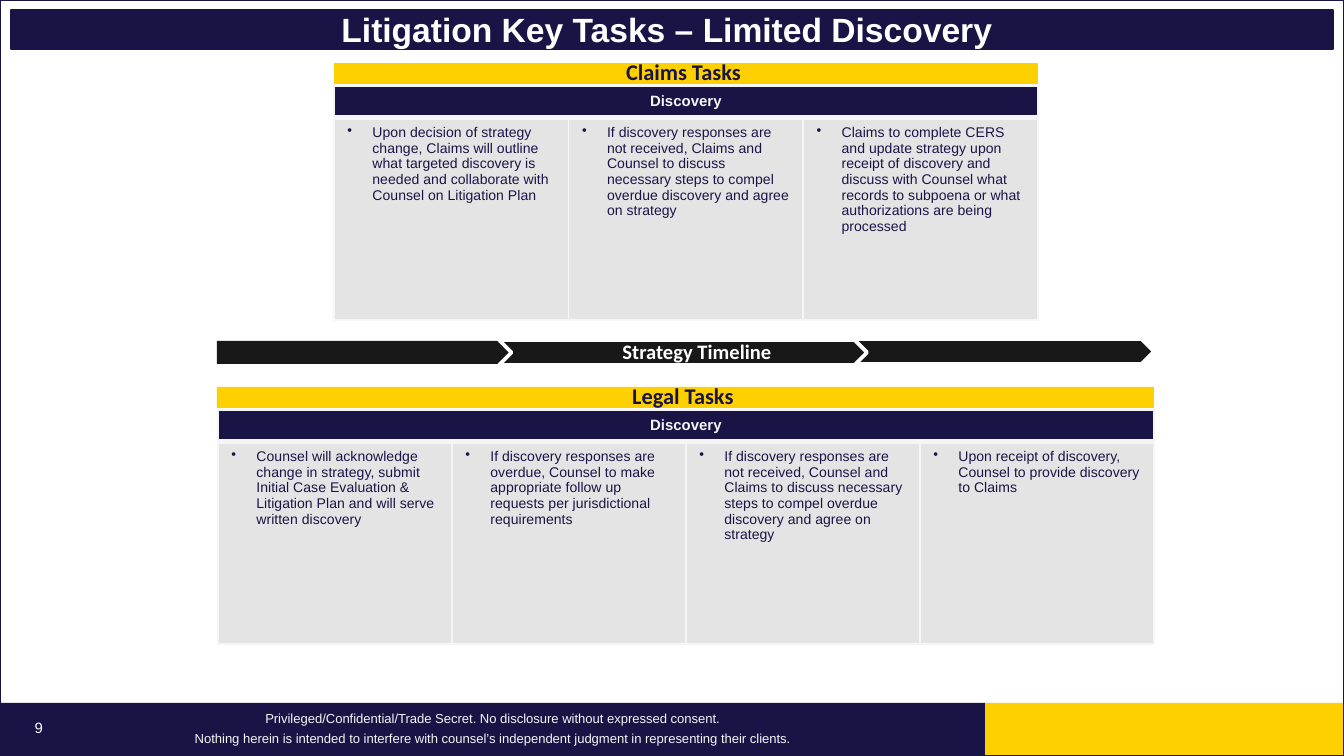
import pptx
import pptx.util
import pptx.dml.color
import pptx.enum.shapes
import pptx.enum.text
import pptx.oxml
import pptx.oxml.ns

SCALE = 9144000 / 1344  # EMU in one px
SHAPE = pptx.enum.shapes.MSO_SHAPE
ALIGN = pptx.enum.text.PP_ALIGN
MIDDLE = pptx.enum.text.MSO_ANCHOR.MIDDLE

THEME = {
    "navy": "1A1446", "yellow": "FFD000", "grey": "E4E4E4",
    "black": "181818", "white": "FFFFFF", "pale": "F5F5F5",
    "title": {"name": "Arial", "size": pptx.util.Pt(18), "bold": True},
    "section": {"name": "Calibri", "size": pptx.util.Pt(12), "bold": True},
    "timeline": {"name": "Calibri", "size": pptx.util.Pt(11), "bold": True},
    "header": {"name": "Arial", "size": pptx.util.Pt(8), "bold": True},
    "task": {"name": "Arial", "size": pptx.util.Pt(7.5), "bold": False},
    "footer": {"name": "Arial", "size": pptx.util.Pt(7), "bold": False},
    "number": {"name": "Arial", "size": pptx.util.Pt(8), "bold": False},
}


def px(*lengths):
    """Turn px lengths into a list of EMU lengths."""
    return [pptx.util.Emu(round(length * SCALE)) for length in lengths]


def write(frame, text, style, color, **paragraph_format):
    """Fill a text frame, one paragraph per line of text."""
    frame.text = text
    for paragraph in frame.paragraphs:
        for name, value in paragraph_format.items():
            setattr(paragraph, name, value)
        for run in paragraph.runs:
            for name, value in THEME[style].items():
                setattr(run.font, name, value)
            run.font.color.rgb = pptx.dml.color.RGBColor.from_string(THEME[color])


presentation = pptx.Presentation()
presentation.slide_width, presentation.slide_height = px(1344, 756)
slide = presentation.slides.add_slide(presentation.slide_layouts[5])

# The title placeholder is itself the rounded bar
title = slide.shapes.title
title.left, title.top, title.width, title.height = px(11, 10, 1322, 39)
title._element.spPr.append(pptx.oxml.parse_xml(
    f'<a:prstGeom {pptx.oxml.ns.nsdecls("a")} prst="roundRect"><a:avLst/></a:prstGeom>'))

# Kind, box, fill, line colour, line width
shape_rows = {
    "footer accent": (SHAPE.RECTANGLE, (985, 703, 359, 53), "yellow", None, 0),
    "footer": (SHAPE.RECTANGLE, (0, 703, 985, 53), "navy", None, 0),
    "page number": (None, (11, 713, 32, 30), "navy", None, 0),
    "claims bar": (SHAPE.RECTANGLE, (334, 63, 704, 21), "yellow", None, 0),
    "legal bar": (SHAPE.RECTANGLE, (217, 387, 937, 21), "yellow", None, 0),
    "title": (None, None, "navy", "navy", 1),
    "timeline start": (SHAPE.PENTAGON, (217, 341, 301, 23), "black", None, 0),
    "timeline end": (SHAPE.CHEVRON, (853, 339, 301, 25), "black", "white", 2),
    "timeline middle": (SHAPE.CHEVRON, (499, 340, 368, 25), "black", "white", 2),
    "timeline label": (SHAPE.RECTANGLE, (577, 348, 233, 9), "black", None, 0),
    "slide frame": (SHAPE.RECTANGLE, (0, 0, 1344, 756), None, "navy", 0.75),
}
shapes = {}
for name, (kind, box, fill, line, width) in shape_rows.items():
    if box is None:
        shape = title
    elif kind is None:
        shape = slide.shapes.add_textbox(*px(*box))
    else:
        shape = slide.shapes.add_shape(kind, *px(*box))
        shape.shadow.inherit = False
    if fill:
        shape.fill.solid()
        shape.fill.fore_color.rgb = pptx.dml.color.RGBColor.from_string(THEME[fill])
    else:
        shape.fill.background()
    if line:
        shape.line.color.rgb = pptx.dml.color.RGBColor.from_string(THEME[line])
        shape.line.width = pptx.util.Pt(width)
    else:
        shape.line.fill.background()
    shapes[name] = shape

# Shape, text, style, colour, alignment, line spacing, left and right margin
footer_text = (
    "Privileged/Confidential/Trade Secret. No disclosure without expressed consent.\n"
    "Nothing herein is intended to interfere with counsel’s independent judgment "
    "in representing their clients."
)
labels = [
    ("title", "Litigation Key Tasks – Limited Discovery", "title", "white",
     ALIGN.CENTER, 1.0, 0, 10),
    ("claims bar", "Claims Tasks", "section", "navy", ALIGN.CENTER, 0.9, 0, 5),
    ("legal bar", "Legal Tasks", "section", "navy", ALIGN.CENTER, 0.9, 0, 5),
    ("timeline label", "Strategy Timeline", "timeline", "white", ALIGN.CENTER, 0.9, 11, 4),
    ("footer", footer_text, "footer", "pale", ALIGN.CENTER, 0.85, 0, 0),
    ("page number", "9", "number", "white", ALIGN.RIGHT, 1.0, 0, 0),
]
frame_format = {
    "margin_top": 0, "margin_bottom": 0, "vertical_anchor": MIDDLE, "word_wrap": True,
    "auto_size": pptx.enum.text.MSO_AUTO_SIZE.NONE,
}
for name, text, style, color, alignment, spacing, left, right in labels:
    frame = shapes[name].text_frame
    write(frame, text, style, color, alignment=alignment, line_spacing=spacing)
    for attribute, value in frame_format.items():
        setattr(frame, attribute, value)
    frame.margin_left, frame.margin_right = px(left, right)
shapes["footer"].text_frame.paragraphs[1].space_before = pptx.util.Pt(3.5)

# Task tables: left, top, width, tasks
task_tables = [
    (334, 86, 704, [
        "Upon decision of strategy change, Claims will outline what targeted discovery "
        "is needed and collaborate with Counsel on Litigation Plan",
        "If discovery responses are not received, Claims and Counsel to discuss "
        "necessary steps to compel overdue discovery and agree on strategy",
        "Claims to complete CERS and update strategy upon receipt of discovery and "
        "discuss with Counsel what records to subpoena or what authorizations are "
        "being processed",
    ]),
    (218, 410, 936, [
        "Counsel will acknowledge change in strategy, submit Initial Case Evaluation "
        "& Litigation Plan and will serve written discovery",
        "If discovery responses are overdue, Counsel to make appropriate follow up "
        "requests per jurisdictional requirements",
        "If discovery responses are not received, Counsel and Claims to discuss "
        "necessary steps to compel overdue discovery and agree on strategy",
        "Upon receipt of discovery, Counsel to provide discovery to Claims",
    ]),
]
row_heights = px(32, 202)
indent = px(25)[0]
for left, top, width, tasks in task_tables:
    count = len(tasks)
    table = slide.shapes.add_table(2, count, *px(left, top, width, 234)).table
    table.first_row = table.horz_banding = False
    for row, height in zip(table.rows, row_heights):
        row.height = height
    for column in table.columns:
        column.width = px(width / count)[0]
    table.cell(0, 0).merge(table.cell(0, count - 1))

    for row_index, fill in enumerate(("navy", "grey")):
        for column_index in range(count):
            cell = table.cell(row_index, column_index)
            properties = cell._tc.get_or_add_tcPr()
            for side in ("L", "R", "T", "B"):
                at_divider = (row_index, side) in ((0, "B"), (1, "T"))
                line_width = pptx.util.Pt(3 if at_divider else 1)
                properties.append(pptx.oxml.parse_xml(
                    f'<a:ln{side} {pptx.oxml.ns.nsdecls("a")} w="{line_width}"><a:solidFill>'
                    f'<a:srgbClr val="{THEME["pale"]}"/></a:solidFill></a:ln{side}>'))
            cell.fill.solid()
            cell.fill.fore_color.rgb = pptx.dml.color.RGBColor.from_string(THEME[fill])

    header = table.cell(0, 0)
    header.vertical_anchor = MIDDLE
    write(header.text_frame, "Discovery", "header", "pale",
          alignment=ALIGN.CENTER, line_spacing=0.85)
    for column_index, task in enumerate(tasks):
        frame = table.cell(1, column_index).text_frame
        write(frame, task, "task", "navy", alignment=ALIGN.LEFT)
        paragraph_properties = frame.paragraphs[0]._p.get_or_add_pPr()
        paragraph_properties.set("marL", str(indent))
        paragraph_properties.set("indent", str(-indent))
        paragraph_properties.append(pptx.oxml.parse_xml(
            f'<a:buChar {pptx.oxml.ns.nsdecls("a")} char="•"/>'))

# The frame lies over everything else
slide.shapes._spTree.append(shapes["slide frame"]._element)

presentation.save("out.pptx")
